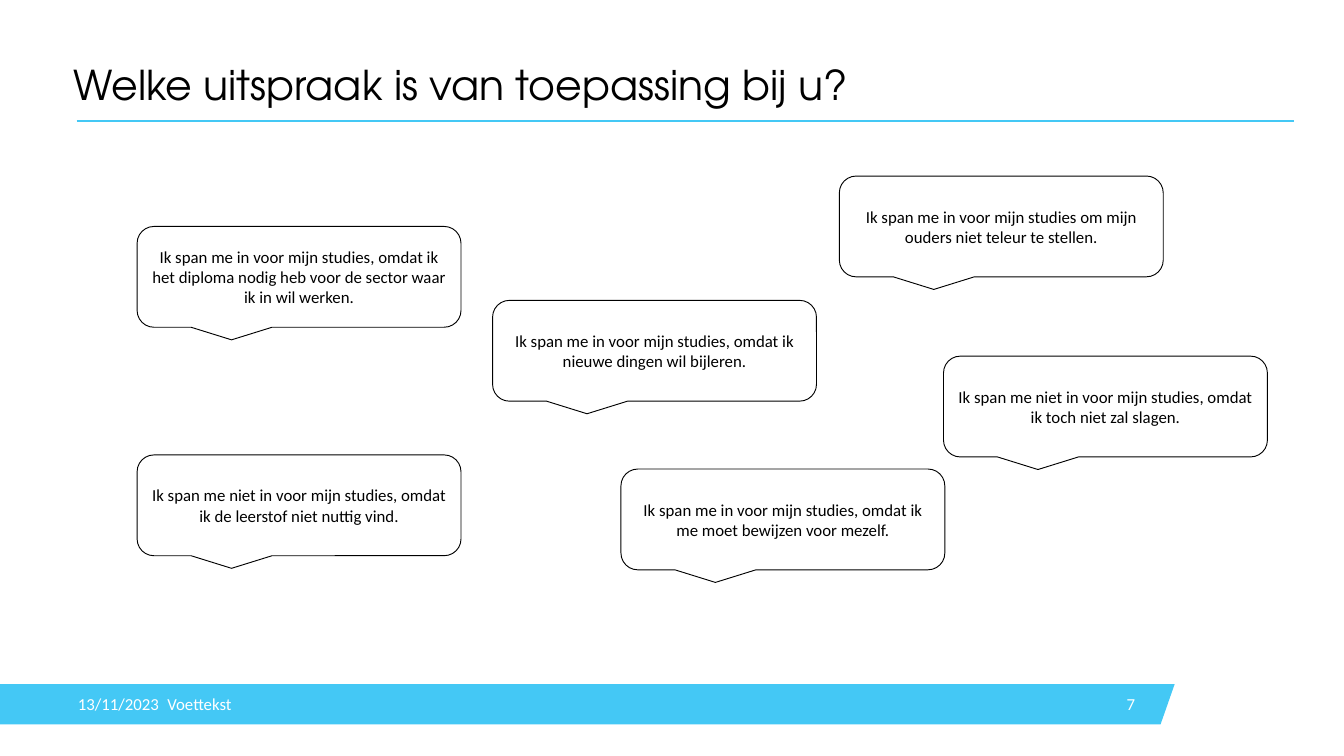
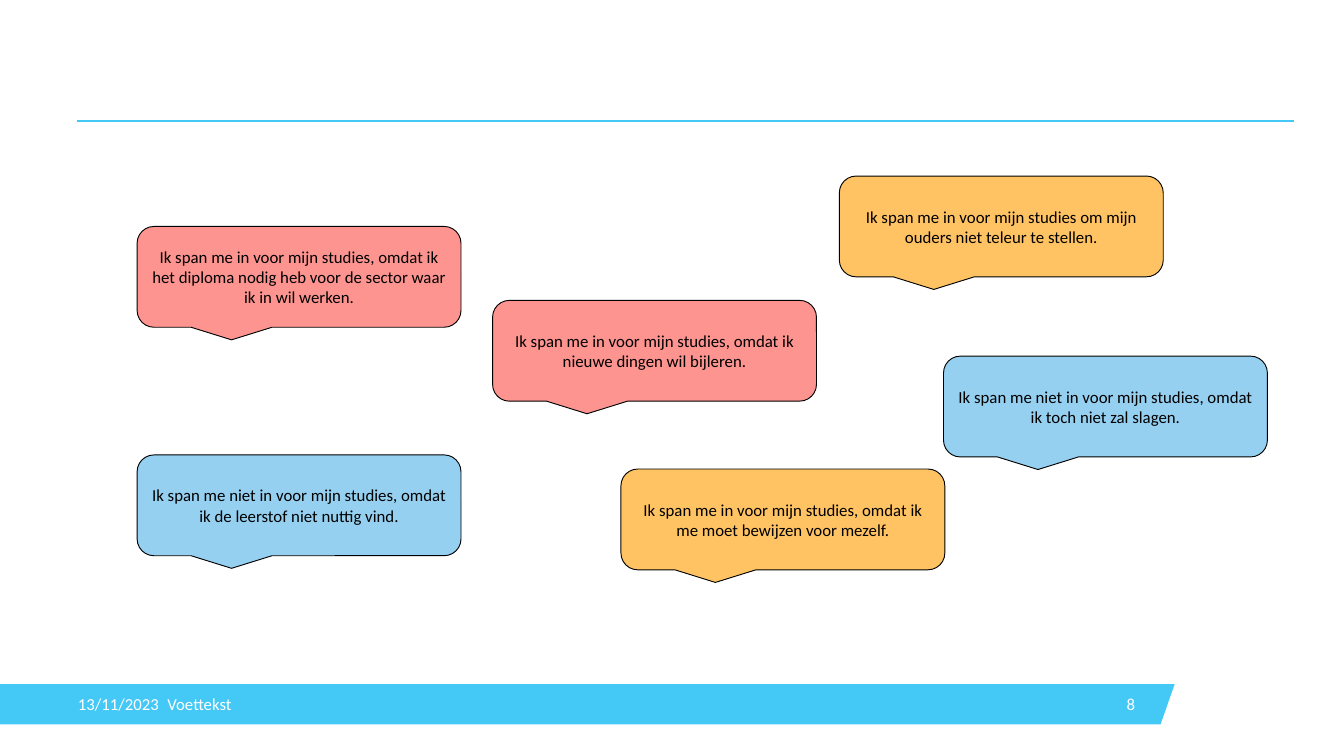
"""Build two slides of study-motivation statements, first neutral and then coloured by type."""
import pptx
import pptx.dml.color
import pptx.enum.shapes
import pptx.enum.text
import pptx.oxml
import pptx.util
from dataclasses import dataclass

Inches = pptx.util.Inches
Align = pptx.enum.text.PP_ALIGN
Anchor = pptx.enum.text.MSO_ANCHOR


@dataclass(frozen=True)
class Theme:
    accent: str = "44C8F5"
    ink: str = "000000"
    paper: str = "FFFFFF"
    red: str = "FD9490"
    orange: str = "FFC364"
    blue: str = "95D0F1"
    title_font: str = "TeX Gyre Adventor"
    body_font: str = "Calibri"
    title_size: int = 44
    body_size: int = 18


THEME = Theme()

STATEMENTS = [
    ("Ik span me in voor mijn studies, omdat ik het diploma nodig heb voor de sector waar ik in wil werken.",
     2.04, 3.37, THEME.red),
    ("Ik span me in voor mijn studies, omdat ik nieuwe dingen wil bijleren.", 7.33, 4.47, THEME.red),
    ("Ik span me in voor mijn studies om mijn ouders niet teleur te stellen.", 12.49, 2.62, THEME.orange),
    ("Ik span me in voor mijn studies, omdat ik me moet bewijzen voor mezelf.", 9.24, 6.98, THEME.orange),
    ("Ik span me niet in voor mijn studies, omdat ik de leerstof niet nuttig vind.", 2.04, 6.77, THEME.blue),
    ("Ik span me niet in voor mijn studies, omdat ik toch niet zal slagen.", 14.04, 5.3, THEME.blue),
]
PAGES = [
    {"number": 7, "title": "Welke uitspraak is van toepassing bij u?", "coloured": False},
    {"number": 8, "title": None, "coloured": True},
]
DATE, FOOTER = "13/11/2023", "Voettekst"
CALLOUT_SIZE = (4.82, 1.5)
BAND_TOP, BAND_HEIGHT = 10.18, 0.6
BAND_OUTLINE = [(-0.01, BAND_TOP), (17.48, BAND_TOP),
                (17.27, BAND_TOP + BAND_HEIGHT), (-0.01, BAND_TOP + BAND_HEIGHT)]


def rgb(value):
    return pptx.dml.color.RGBColor.from_string(value)


def write(box, text, *, color=THEME.ink, font=THEME.body_font, size=THEME.body_size,
          align=Align.LEFT, anchor=Anchor.MIDDLE, inset=True, spacing=None):
    frame = box.text_frame
    frame.word_wrap = True
    frame.auto_size = pptx.enum.text.MSO_AUTO_SIZE.NONE
    frame.vertical_anchor = anchor
    if not inset:
        frame.margin_left = frame.margin_top = frame.margin_right = frame.margin_bottom = 0
    para = frame.paragraphs[0]
    para.alignment = align
    if spacing:
        para.line_spacing = spacing
    span = para.add_run()
    span.text = text
    span.font.name = font
    span.font.size = pptx.util.Pt(size)
    span.font.color.rgb = rgb(color)


def paint(shape, fill, line=None):
    shape.shadow.inherit = False
    shape.fill.solid()
    shape.fill.fore_color.rgb = rgb(fill)
    if line:
        shape.line.color.rgb = rgb(line)
        shape.line.width = pptx.util.Pt(1)
    else:
        shape.line.fill.background()


def add_frame(page, number):
    start, *corners = [(Inches(x), Inches(y)) for x, y in BAND_OUTLINE]
    builder = page.shapes.build_freeform(*start)
    builder.add_line_segments(corners, close=True)
    paint(builder.convert_to_shape(), THEME.accent)

    rule = page.shapes.add_connector(pptx.enum.shapes.MSO_CONNECTOR.STRAIGHT,
                                     Inches(1.14), Inches(1.8), Inches(19.25), Inches(1.8))
    rule.line.color.rgb = rgb(THEME.accent)
    rule.line.width = pptx.util.Pt(2.25)
    properties = rule._element.spPr
    properties.append(pptx.oxml.parse_xml(
        '<a:effectLst xmlns:a="http://schemas.openxmlformats.org/drawingml/2006/main"/>'))

    for text, left, width, align, inset in [
        (str(number), 15.9, 1.09, Align.RIGHT, True),
        (DATE, 1.16, 1.33, Align.LEFT, False),
        (FOOTER, 2.49, 6.75, Align.LEFT, False),
    ]:
        box = page.shapes.add_textbox(Inches(left), Inches(BAND_TOP), Inches(width), Inches(BAND_HEIGHT))
        write(box, text, color=THEME.paper, align=align, inset=inset)


def add_title(page, text):
    title = page.shapes.title
    title.left, title.top, title.width, title.height = map(Inches, (1.09, 0.97, 18.13, 0.69))
    write(title, text, font=THEME.title_font, size=THEME.title_size,
          anchor=Anchor.TOP, inset=False, spacing=0.9)


def add_callouts(page, coloured):
    for text, left, top, color in STATEMENTS:
        callout = page.shapes.add_shape(pptx.enum.shapes.MSO_SHAPE.ROUNDED_RECTANGULAR_CALLOUT,
                                        *map(Inches, (left, top, *CALLOUT_SIZE)))
        paint(callout, color if coloured else THEME.paper, THEME.ink)
        write(callout, text, align=Align.CENTER)


def main():
    deck = pptx.Presentation()
    deck.slide_width, deck.slide_height = Inches(20), Inches(11.25)
    title_only, blank = deck.slide_layouts[5], deck.slide_layouts[6]
    for content in PAGES:
        page = deck.slides.add_slide(title_only if content["title"] else blank)
        add_frame(page, content["number"])
        if content["title"]:
            add_title(page, content["title"])
        add_callouts(page, content["coloured"])
    deck.save("out.pptx")


if __name__ == "__main__":
    main()
